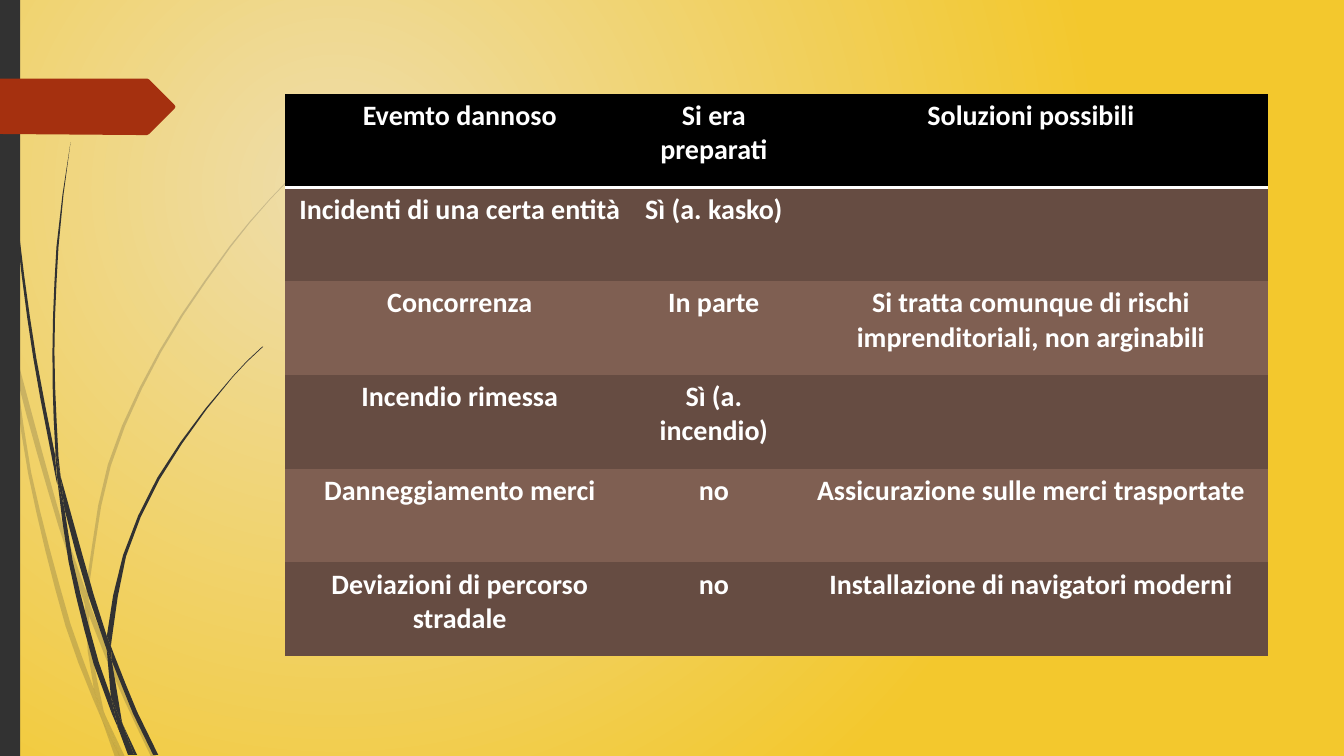
import math

import pptx
import pptx.dml.color
import pptx.enum.shapes
import pptx.enum.text
import pptx.oxml
import pptx.oxml.ns
import pptx.util
from lxml import etree

PX = 9144  # EMU per px, 100 px to the inch
qn = pptx.oxml.ns.qn


class Theme:
    glow, gold = "EEDDAB", "F3C82D"
    dark, red = "323232", "A5300F"
    head, bands = "000000", ("664C42", "7F5F52")
    text, rule = "FFFFFF", 2
    font, size = "Calibri", 20
    plain = "{2D5ABB26-0587-4C30-8999-92F81FD0307C}"  # no style, no grid


def rgb(code):
    return pptx.dml.color.RGBColor.from_string(code)


def sub(node, tag, **attrs):
    return etree.SubElement(node, qn(tag), attrs)


def aim(a, b, c):
    """Unit directions into and out of b; one shared direction unless b is a corner."""
    come, leave = (math.atan2(q[1] - p[1], q[0] - p[0]) for p, q in ((a, b), (b, c)))
    if math.cos(come - leave) > 0.6:
        come = leave = math.atan2(c[1] - a[1], c[0] - a[0])
    return [(math.cos(t), math.sin(t)) for t in (come, leave)]


def smooth(dots, pace=40):
    """Closed outline bent gently through the given dots, one step per pace."""
    n = len(dots)
    aims = [aim(dots[i - 1], dots[i], dots[(i + 1) % n]) for i in range(n)]
    out = []
    for i, p in enumerate(dots):
        j = (i + 1) % n
        q, reach = dots[j], math.dist(p, dots[j]) / 3
        steps = max(1, round(3 * reach / pace))
        for k in range(steps):
            t = k / steps
            u = 1 - t
            out.append(tuple(
                u**3 * p[d] + 3 * u * u * t * (p[d] + reach * aims[i][1][d])
                + 3 * u * t * t * (q[d] - reach * aims[j][0][d]) + t**3 * q[d]
                for d in (0, 1)))
    return out


class Deck:
    def __init__(self, theme):
        self.theme = theme
        self.prs = pptx.Presentation()
        self.prs.slide_width, self.prs.slide_height = 1333 * PX, 750 * PX
        self.slide = self.prs.slides.add_slide(self.prs.slide_layouts[6])

    def ground(self):
        fill = self.slide.background.fill
        fill.gradient()
        for stop, code in zip(fill.gradient_stops, (self.theme.glow, self.theme.gold)):
            stop.color.rgb = rgb(code)
        grad = self.slide.element.find(".//" + qn("a:gradFill"))
        grad.remove(grad.find(qn("a:lin")))
        ring = sub(grad, "a:path", path="circle")
        sub(ring, "a:fillToRect", l="50000", t="50000", r="100000", b="100000")

    def paint(self, shape, code, alpha=100):
        shape.shadow.inherit = False
        shape.fill.solid()
        shape.fill.fore_color.rgb = rgb(code)
        shape.line.fill.background()
        if alpha < 100:
            tint = shape.element.spPr.find(qn("a:solidFill"))[0]
            sub(tint, "a:alpha", val=str(alpha * 1000))

    def rect(self, x, y, w, h, code):
        kind = pptx.enum.shapes.MSO_SHAPE.RECTANGLE
        shape = self.slide.shapes.add_shape(kind, x * PX, y * PX, w * PX, h * PX)
        self.paint(shape, code)

    def form(self, dots, code, alpha=100):
        dots = [(x * PX, y * PX) for x, y in dots]
        pen = self.slide.shapes.build_freeform(*dots[0], scale=1.0)
        pen.add_line_segments(dots[1:], close=True)
        self.paint(pen.convert_to_shape(), code, alpha)

    def table(self, x, y, cols, high, rows):
        frame = self.slide.shapes.add_table(
            len(rows), len(cols), x * PX, y * PX, sum(cols) * PX, high * len(rows) * PX)
        grid = frame.table
        frame._element.find(".//" + qn("a:tableStyleId")).text = self.theme.plain
        for col, wide in zip(grid.columns, cols):
            col.width = wide * PX
        for r, row in enumerate(rows):
            grid.rows[r].height = high * PX
            for c, text in enumerate(row):
                self.cell(grid.cell(r, c), text, r)

    def cell(self, cell, text, row):
        look = self.theme
        cell.fill.solid()
        cell.fill.fore_color.rgb = rgb(look.bands[(row - 1) % 2] if row else look.head)
        para = cell.text_frame.paragraphs[0]
        para.text = text
        para.alignment = pptx.enum.text.PP_ALIGN.CENTER
        for run in para.runs:
            run.font.name, run.font.bold = look.font, True
            run.font.size = pptx.util.Pt(look.size)
            run.font.color.rgb = rgb(look.text)
        if row == 0:
            props = cell._tc.get_or_add_tcPr()
            line = sub(props, "a:lnB", w=str(int(pptx.util.Pt(look.rule))))
            sub(sub(line, "a:solidFill"), "a:srgbClr", val=look.text)
            props.insert(0, line)


# Grass blades, pale behind and dark in front
PALE = [
    [(11, 350), (9, 322), (0, 282), (0, 299), (10, 344)],
    [(58, 522), (84, 599), (85, 586), (62, 520), (14, 345), (17, 376)],
    [(92, 607), (88, 596), (88, 610), (123, 694), (150, 751), (155, 751), (127, 692)],
    [(119, 751), (124, 751), (105, 711)],
    [(93, 683), (70, 619), (31, 469), (17, 376), (11, 350), (28, 470), (65, 621),
     (92, 693), (101, 714), (99, 707)],
    [(84, 599), (87, 646), (93, 683), (96, 692), (105, 711), (103, 706), (91, 646),
     (88, 610), (88, 608)],
    [(88, 584), (110, 462), (160, 349), (229, 245), (268, 198), (290, 175), (312, 154),
     (312, 153), (289, 175), (268, 197), (228, 244), (158, 348), (107, 461), (85, 584),
     (85, 586), (88, 596)],
    [(101, 714), (114, 751), (119, 751)],
    [(88, 608), (88, 610), (88, 596), (85, 586), (84, 599)],
    [(96, 692), (93, 683), (99, 707), (101, 714), (119, 751), (105, 711)],
]
DARK = [
    [(7, 110), (17, 233), (33, 355), (56, 477), (57, 481), (55, 457), (55, 453), (36, 355),
     (19, 232), (8, 109), (5, 48), (4, 0), (3, 0), (4, 48)],
    [(88, 592), (106, 645), (106, 633), (106, 631), (93, 590), (60, 472), (64, 505)],
    [(113, 649), (110, 641), (111, 656), (132, 708), (152, 749), (157, 749), (136, 706)],
    [(110, 691), (98, 657), (72, 556), (64, 505), (57, 477), (68, 557), (93, 659),
     (111, 708), (117, 722), (116, 717)],
    [(60, 472), (58, 453), (54, 349), (58, 245), (63, 193), (70, 141), (62, 193),
     (56, 245), (52, 349), (55, 449)],
    [(133, 749), (136, 749), (122, 719)],
    [(57, 477), (64, 505), (60, 472), (55, 449), (55, 453)],
    [(111, 633), (125, 552), (158, 476), (205, 406), (231, 374), (245, 359), (261, 344),
     (260, 344), (245, 358), (231, 373), (204, 405), (156, 474), (122, 551), (106, 631),
     (110, 641)],
    [(117, 722), (127, 749), (131, 749)],
    [(106, 645), (110, 691), (116, 706), (122, 719), (121, 716), (111, 656), (109, 651)],
    [(106, 645), (109, 651), (111, 656), (110, 641), (106, 631), (106, 633)],
    [(116, 706), (110, 691), (116, 717), (117, 722), (130, 749), (133, 749), (122, 719)],
]
ARROW = [(0, 78), (146, 78), (148, 79), (173, 104), (174, 106), (173, 108), (148, 133),
         (146, 134), (136, 134), (0, 133)]
ROWS = [
    ("Evemto dannoso", "Si era preparati", "Soluzioni possibili"),
    ("Incidenti di una certa entità", "Sì (a. kasko)", ""),
    ("Concorrenza", "In parte",
     "Si tratta comunque di rischi imprenditoriali, non arginabili"),
    ("Incendio rimessa", "Sì (a. incendio)", ""),
    ("Danneggiamento merci", "no", "Assicurazione sulle merci trasportate"),
    ("Deviazioni di percorso stradale", "no", "Installazione di navigatori moderni"),
]


def main():
    deck = Deck(Theme)
    # Backdrop
    deck.ground()
    for blades, alpha in ((PALE, 20), (DARK, 100)):
        for blade in blades:
            deck.form(smooth(blade), Theme.dark, alpha)
    # Side bar and arrow tab
    deck.rect(0, 0, 20, 750, Theme.dark)
    deck.form(ARROW, Theme.red)
    # Risk table
    deck.table(283, 93, (346, 158, 471), 93, ROWS)
    deck.prs.save("out.pptx")


if __name__ == "__main__":
    main()
